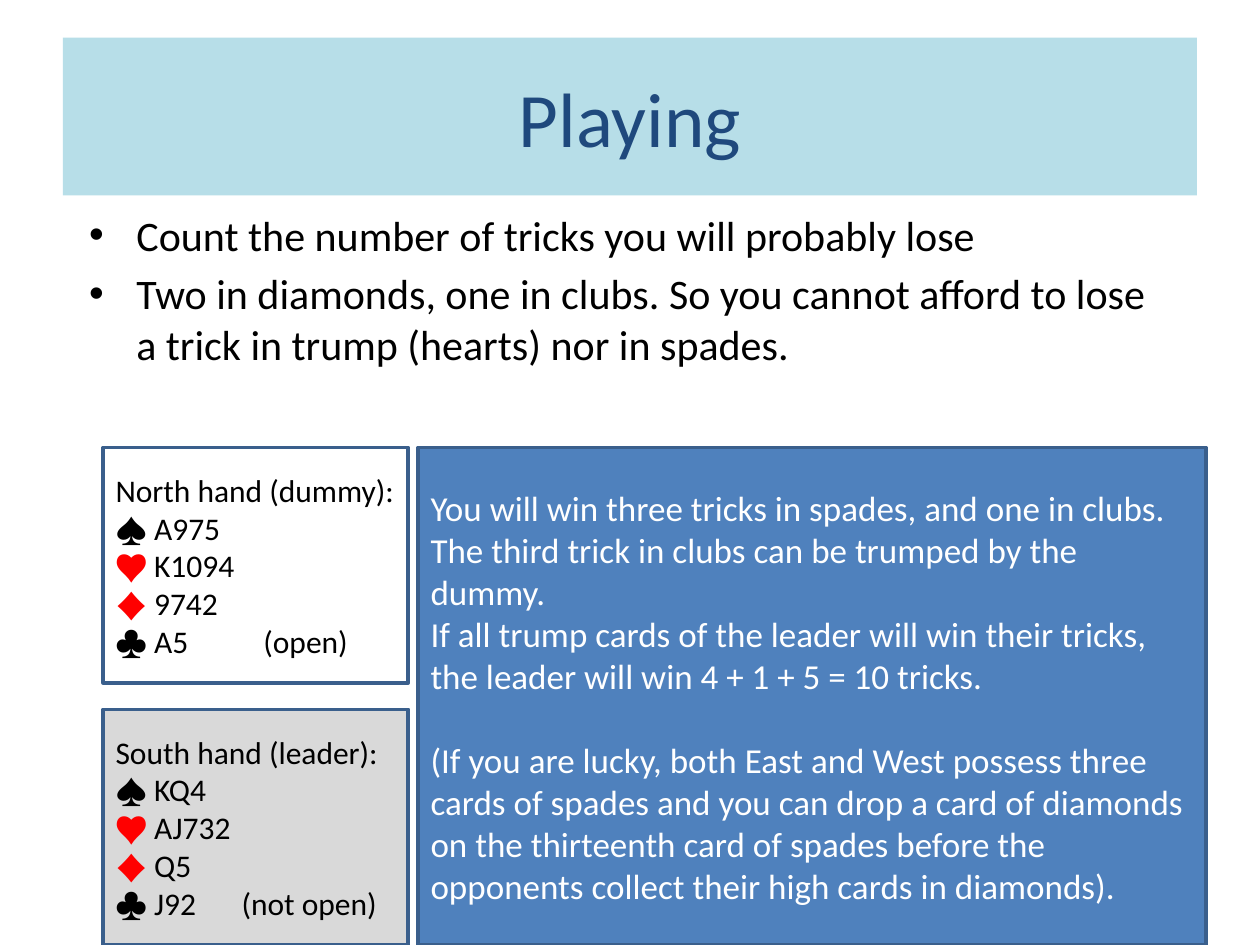
import pptx
import pptx.util
import pptx.dml.color
import pptx.enum.shapes
import pptx.enum.text
import pptx.oxml.ns
import lxml.etree

Cm, Pt = pptx.util.Cm, pptx.util.Pt
RGBColor = pptx.dml.color.RGBColor
PP_ALIGN = pptx.enum.text.PP_ALIGN
qn = pptx.oxml.ns.qn

BLACK = RGBColor(0x00, 0x00, 0x00)
WHITE = RGBColor(0xFF, 0xFF, 0xFF)
RED = RGBColor(0xFF, 0x00, 0x00)
GREY = RGBColor(0xD9, 0xD9, 0xD9)
PALE_BLUE = RGBColor(0xB7, 0xDE, 0xE8)
NAVY = RGBColor(0x1F, 0x49, 0x7D)
BLUE = RGBColor(0x4F, 0x81, 0xBD)
DARK_BLUE = RGBColor(0x3A, 0x5F, 0x8C)

prs = pptx.Presentation()
prs.slide_width, prs.slide_height = Cm(25.4), Cm(19.05)
s = prs.slides.add_slide(prs.slide_layouts[6])


def add_box(left, top, width, height, fill, line=None):
    sp = s.shapes.add_shape(pptx.enum.shapes.MSO_SHAPE.RECTANGLE,
                            Cm(left), Cm(top), Cm(width), Cm(height))
    sp.shadow.inherit = False
    sp.fill.solid()
    sp.fill.fore_color.rgb = fill
    if line is None:
        sp.line.fill.background()
    else:
        sp.line.color.rgb = line
        sp.line.width = Pt(2)
    sp.text_frame.word_wrap = True
    sp.text_frame.vertical_anchor = pptx.enum.text.MSO_ANCHOR.MIDDLE
    return sp.text_frame


def write_paragraphs(tf, texts, size, color, align=PP_ALIGN.LEFT):
    tf.text = "\n".join(texts)
    for p in tf.paragraphs:
        p.alignment = align
        for r in p.runs:
            r.font.name = "Calibri"
            r.font.size = Pt(size)
            r.font.color.rgb = color


# Title
tf = add_box(1.27, 0.76, 22.86, 3.18, PALE_BLUE)
write_paragraphs(tf, ["Playing"], 44, NAVY, PP_ALIGN.CENTER)

# Bullets
tf = s.shapes.add_textbox(Cm(1.55), Cm(4.09), Cm(22.1), Cm(13.08)).text_frame
tf.word_wrap = True
write_paragraphs(tf, [
    "Count the number of tricks you will probably lose",
    "Two in diamonds, one in clubs. So you cannot afford to lose "
    "a trick in trump (hearts) nor in spades.",
], 24, BLACK)
for p in tf.paragraphs:
    p.space_before = Pt(4.8)
    pPr = p._p.get_or_add_pPr()
    pPr.set("marL", str(Cm(0.95)))
    pPr.set("indent", str(-Cm(0.95)))
    lxml.etree.SubElement(pPr, qn("a:buFont")).set("typeface", "Arial")
    lxml.etree.SubElement(pPr, qn("a:buChar")).set("char", "•")

# Hands: title, cards per suit, note after the clubs, tab position, top, fill
hands = [
    ("North hand (dummy):", ["A975", "K1094", "9742", "A5"], "(open)",
     2.98, 9.02, WHITE),
    ("South hand (leader):", ["KQ4", "AJ732", "Q5", "J92"], "(not open)",
     2.54, 14.3, GREY),
]
for title, cards, note, tab, top, fill in hands:
    tf = add_box(2.08, top, 6.15, 4.75, fill, DARK_BLUE)
    write_paragraphs(tf, [title] + ["♠♥♦♣"] * 4, 18, BLACK)
    for p, suit, held in zip(tf.paragraphs[1:], "♠♥♦♣", cards):
        symbol, r = p.runs[0], p.add_run()
        symbol.text = suit
        symbol.font.color.rgb = RED if suit in "♥♦" else BLACK
        r.text = f" {held}\t{note}" if suit == "♣" else f" {held}"
        r.font.name = "Calibri"
        r.font.size = Pt(18)
        r.font.color.rgb = BLACK
    tabs = lxml.etree.SubElement(p._p.get_or_add_pPr(), qn("a:tabLst"))
    stop = lxml.etree.SubElement(tabs, qn("a:tab"))
    stop.set("pos", str(Cm(tab)))
    stop.set("algn", "l")

# Explanation
tf = add_box(8.43, 9.02, 15.88, 10.03, BLUE, DARK_BLUE)
write_paragraphs(tf, [
    "You will win three tricks in spades, and one in clubs. "
    "The third trick in clubs can be trumped by the dummy.",
    "If all trump cards of the leader will win their tricks, "
    "the leader will win 4 + 1 + 5 = 10 tricks.",
    "(If you are lucky, both East and West possess three cards of spades "
    "and you can drop a card of diamonds on the thirteenth card of spades "
    "before the opponents collect their high cards in diamonds).",
], 20, WHITE)
tf.paragraphs[-1].space_before = Pt(24)

prs.save("out.pptx")
